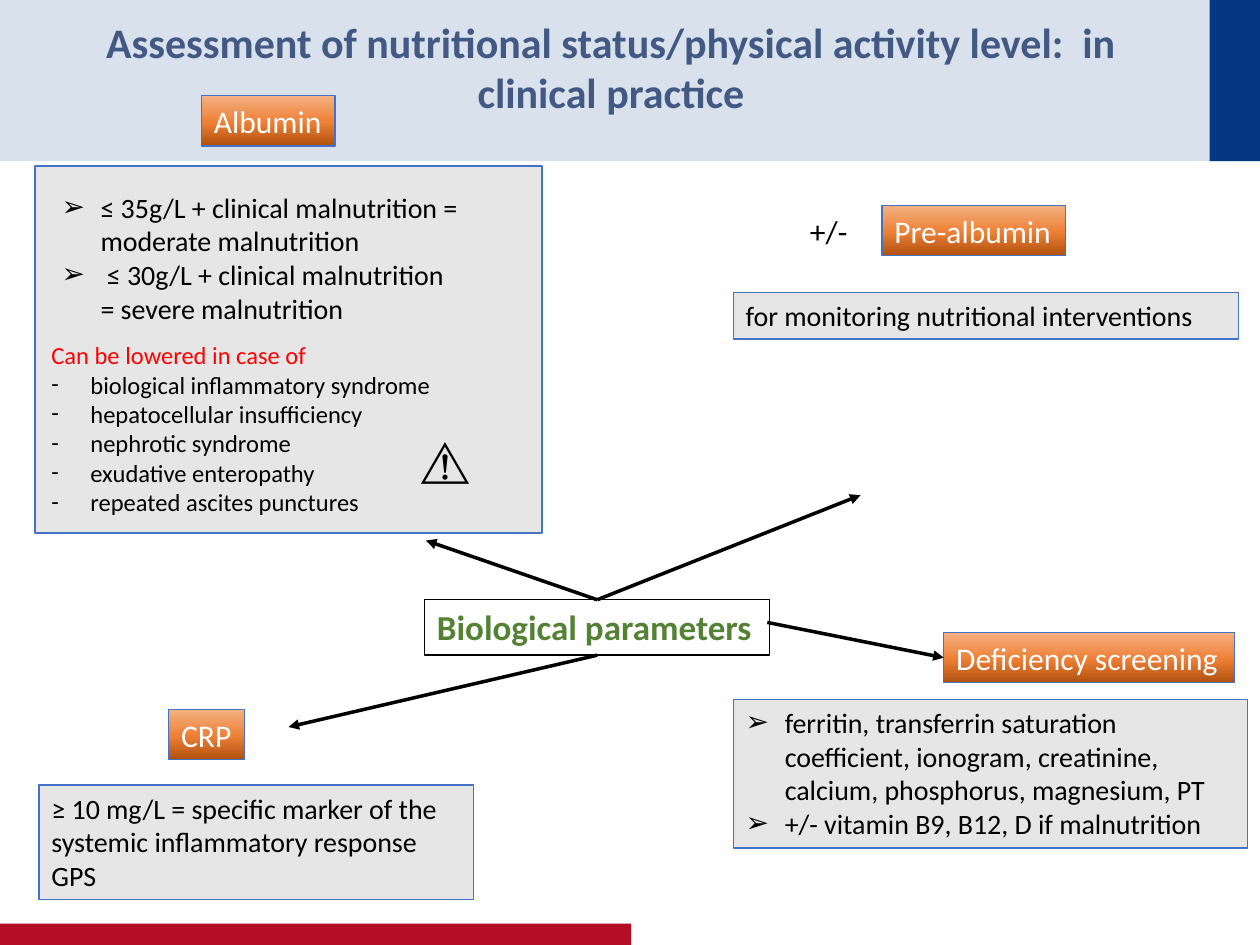
from copy import deepcopy

from pptx import Presentation
from pptx.dml.color import RGBColor
from pptx.enum import shapes, text
from pptx.oxml.ns import qn
from pptx.util import Inches, Pt
from lxml import etree

BLACK, GREY, BLUE = "000000", "E7E6E6", "4472C4"
ORANGE_STOPS = [(0, "B0500F"), (0.48, "EE8137"), (1, "F4B183")]


def color(value):
    return RGBColor.from_string(value)


def outline(shape, value, width):
    shape.line.color.rgb = color(value)
    shape.line.width = Pt(width)


def add_panel(page, box, fill, line=None):
    panel = page.shapes.add_shape(shapes.MSO_SHAPE.RECTANGLE, *map(Inches, box))
    panel.shadow.inherit = False
    panel.fill.solid()
    panel.fill.fore_color.rgb = color(fill)
    if line:
        outline(panel, line, 1)
    else:
        panel.line.fill.background()


def add_text(page, box, lines, size, ink=BLACK, bold=False, wrap=True, fill=None):
    label = page.shapes.add_textbox(*map(Inches, box))
    frame = label.text_frame
    frame.text = "\n".join(lines)
    frame.word_wrap = wrap
    frame.auto_size = text.MSO_AUTO_SIZE.SHAPE_TO_FIT_TEXT
    for paragraph in frame.paragraphs:
        for span in paragraph.runs:
            span.font.name = "Calibri"
            span.font.size = Pt(size)
            span.font.bold = bold
            span.font.color.rgb = color(ink)
    if fill:
        label.fill.solid()
        label.fill.fore_color.rgb = color(fill)
        outline(label, BLUE, 0.75)
    return label


def add_bullets(paragraphs, mark, margin=0.31):
    for paragraph in paragraphs:
        properties = paragraph._p.get_or_add_pPr()
        properties.set("marL", str(Inches(margin)))
        properties.set("indent", str(Inches(-0.31)))
        font = etree.SubElement(properties, qn("a:buFont"))
        font.set("typeface", "Wingdings" if mark == "Ø" else "Calibri")
        etree.SubElement(properties, qn("a:buChar")).set("char", mark)


def add_tag(page, box, caption):
    tag = add_text(page, box, [caption], 18, "FFFFFF", wrap=False)
    tag.fill.gradient()
    tag.fill.gradient_angle = 90
    stop_list = tag._element.spPr.find(".//" + qn("a:gsLst"))
    stop_list.append(deepcopy(stop_list[0]))
    for stop, (position, value) in zip(tag.fill.gradient_stops, ORANGE_STOPS):
        stop.position = position
        stop.color.rgb = color(value)
    outline(tag, BLUE, 0.75)


def add_arrow(page, start, end):
    arrow = page.shapes.add_connector(
        shapes.MSO_CONNECTOR.STRAIGHT, *map(Inches, start + end))
    outline(arrow, BLACK, 2)
    etree.SubElement(arrow.line._get_or_add_ln(), qn("a:tailEnd")).set("type", "triangle")
    etree.SubElement(arrow._element.spPr, qn("a:effectLst"))


def add_frame(page):
    add_panel(page, (0, 0, 10, 1.28), "D9E1EC")
    add_panel(page, (9.6, 0, 0.4, 1.28), "043882")
    add_panel(page, (0, 7.33, 5.01, 0.17), "B60D27")


def add_title(page, box):
    title = add_text(page, box, [
        "Assessment of nutritional status/physical activity level:  in clinical practice",
    ], 24, "425A83", bold=True)
    title.text_frame.paragraphs[0].alignment = text.PP_ALIGN.CENTER


def add_albumin(page, box):
    left, top, width, height = box
    add_panel(page, box, GREY, BLUE)
    add_tag(page, (left + 1.32, top - 0.56, 1.06, 0.4), "Albumin")
    levels = add_text(page, (left - 0.39, top - 0.13, 3.87, 2.05), [
        "≤ 35g/L + clinical malnutrition = moderate malnutrition",
        " ≤ 30g/L + clinical malnutrition = severe malnutrition",
    ], 16)
    levels.text_frame.auto_size = text.MSO_AUTO_SIZE.NONE
    levels.text_frame.margin_top = Inches(0.32)
    add_bullets(levels.text_frame.paragraphs, "➢", 0.81)
    causes = add_text(page, (left + 0.03, top + 1.33, 4.23, 1.51), [
        "Can be lowered in case of",
        "biological inflammatory syndrome",
        "hepatocellular insufficiency",
        "nephrotic syndrome",
        "exudative enteropathy",
        "repeated ascites punctures",
    ], 14)
    heading, *items = causes.text_frame.paragraphs
    heading.runs[0].font.color.rgb = color("FF0000")
    add_bullets(items, "-")
    add_text(page, (left + 2.96, top + 2.05, 1.04, 0.57), ["⚠"], 28)


def add_prealbumin(page, box):
    left, top, width, height = box
    add_text(page, (left + 0.51, top, 0.5, 0.4), ["+/-"], 18, wrap=False)
    add_tag(page, (left + 1.18, top, 1.46, 0.4), "Pre-albumin")
    add_text(page, (left, top + 0.69, width, 0.37),
             ["for monitoring nutritional interventions"], 16, fill=GREY)


def add_crp(page, box):
    left, top, width, height = box
    add_tag(page, (left + 1.03, top, 0.6, 0.4), "CRP")
    add_text(page, (left, top + 0.6, width, 0.91), [
        "≥ 10 mg/L = specific marker of the systemic inflammatory response GPS",
    ], 16, fill=GREY)


def add_deficiency(page, box):
    left, top, width, height = box
    add_tag(page, (left + 1.67, top, 2.31, 0.4), "Deficiency screening")
    tests = add_text(page, (left, top + 0.53, width, 1.18), [
        "ferritin, transferrin saturation coefficient, ionogram, creatinine, "
        "calcium, phosphorus, magnesium, PT",
        "+/- vitamin B9, B12, D if malnutrition",
    ], 16, fill=GREY)
    add_bullets(tests.text_frame.paragraphs, "➢")


def add_hub(page, box):
    left, top, width, height = box
    hub = add_text(page, box, ["Biological parameters"], 20, "548235", bold=True, wrap=False)
    outline(hub, BLACK, 0.75)
    center, bottom = left + width / 2, top + height
    add_arrow(page, (center, top), (3.38, 4.29))
    add_arrow(page, (center, top), (6.83, 3.93))
    add_arrow(page, (center, bottom), (2.29, 5.77))
    add_arrow(page, (left + width - 0.02, 4.94), (7.49, 5.22))


def main():
    deck = Presentation()
    deck.slide_width, deck.slide_height = Inches(10), Inches(7.5)
    page = deck.slides.add_slide(deck.slide_layouts[6])
    add_frame(page)
    add_albumin(page, (0.28, 1.32, 4.02, 2.91))
    add_prealbumin(page, (5.82, 1.63, 4.01, 1.06))
    add_crp(page, (0.31, 5.63, 3.45, 1.51))
    add_deficiency(page, (5.82, 5.02, 4.08, 1.71))
    add_hub(page, (3.37, 4.76, 2.74, 0.44))
    add_title(page, (0.35, 0.08, 9, 0.91))
    deck.save("out.pptx")


if __name__ == "__main__":
    main()
